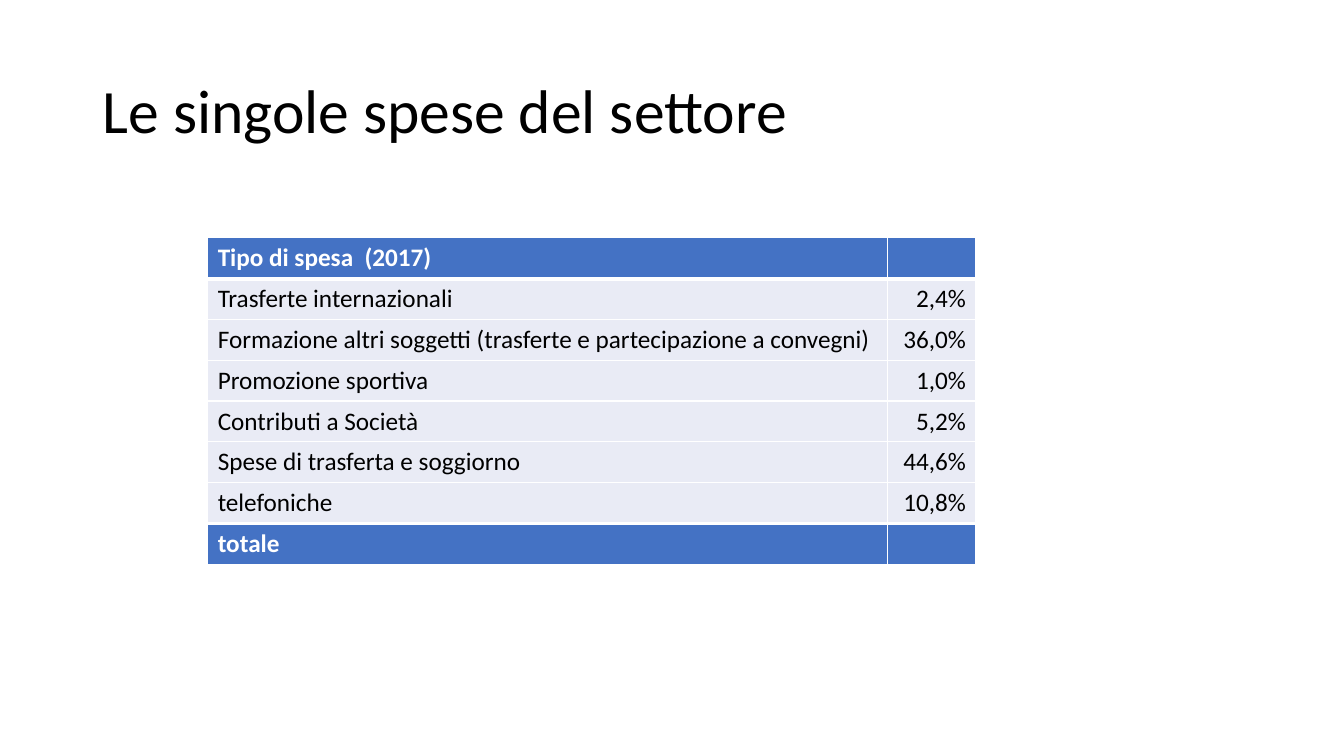
from lxml import etree
from pptx import Presentation
from pptx import util as u
from pptx.dml.color import RGBColor
from pptx.enum import text
from pptx.oxml.ns import qn

WIDTH, HEIGHT = 13.33, 7.5
FONT = "Calibri"
WHITE, BLACK, BLUE, PALE = "FFFFFF", "000000", "4472C4", "E9EBF5"
EXPENSES = [
    ("Tipo di spesa  (2017)", ""),
    ("Trasferte internazionali", "2,4%"),
    ("Formazione altri soggetti (trasferte e partecipazione a convegni)", "36,0%"),
    ("Promozione sportiva", "1,0%"),
    ("Contributi a Società", "5,2%"),
    ("Spese di trasferta e soggiorno", "44,6%"),
    ("telefoniche", "10,8%"),
    ("totale", ""),
]


def color(value):
    return RGBColor.from_string(value)


def write(frame, wording, size=18, ink=BLACK, bold=False,
          align=text.PP_ALIGN.LEFT, spacing=None):
    paragraph = frame.paragraphs[0]
    paragraph.alignment = align
    paragraph.line_spacing = spacing
    paragraph.font.size = u.Pt(size)
    if wording:
        run = paragraph.add_run()
        run.text = wording
        run.font.name = FONT
        run.font.size = u.Pt(size)
        run.font.bold = bold
        run.font.color.rgb = color(ink)


def draw_borders(cell, top, bottom):
    properties = cell._tc.get_or_add_tcPr()
    for side, width in (("L", 1), ("R", 1), ("T", top), ("B", bottom)):
        line = etree.SubElement(properties, qn(f"a:ln{side}"), w=str(u.Pt(width)))
        fill = etree.SubElement(line, qn("a:solidFill"))
        etree.SubElement(fill, qn("a:srgbClr"), val=WHITE)


def add_title(slide, left, top, width, height):
    title = slide.shapes.add_textbox(*map(u.Inches, (left, top, width, height)))
    frame = title.text_frame
    frame.word_wrap = True
    frame.vertical_anchor = text.MSO_ANCHOR.MIDDLE
    write(frame, "Le singole spese del settore", size=44, spacing=0.9)


def add_expenses(slide, left, top, width, height):
    last = len(EXPENSES) - 1
    box = map(u.Inches, (left, top, width, height))
    table = slide.shapes.add_table(len(EXPENSES), 2, *box).table
    table.horz_banding = False
    table.last_row = True
    share_width = 0.88
    for column, column_width in zip(table.columns, (width - share_width, share_width)):
        column.width = u.Inches(column_width)

    for index, expense in enumerate(EXPENSES):
        accent = index in (0, last)
        top_line = 3 if index in (1, last) else 1
        bottom_line = 3 if index in (0, last - 1) else 1
        aligns = (text.PP_ALIGN.LEFT, text.PP_ALIGN.RIGHT)
        for column, (wording, align) in enumerate(zip(expense, aligns)):
            cell = table.cell(index, column)
            draw_borders(cell, top_line, bottom_line)
            cell.fill.solid()
            cell.fill.fore_color.rgb = color(BLUE if accent else PALE)
            write(cell.text_frame, wording, ink=WHITE if accent else BLACK,
                  bold=accent, align=align)


def main():
    deck = Presentation()
    deck.slide_width, deck.slide_height = u.Inches(WIDTH), u.Inches(HEIGHT)
    slide = deck.slides.add_slide(deck.slide_layouts[6])
    add_title(slide, 0.92, 0.4, 11.5, 1.45)
    add_expenses(slide, 2.06, 2.36, 7.62, 3.24)
    deck.save("out.pptx")


if __name__ == "__main__":
    main()
